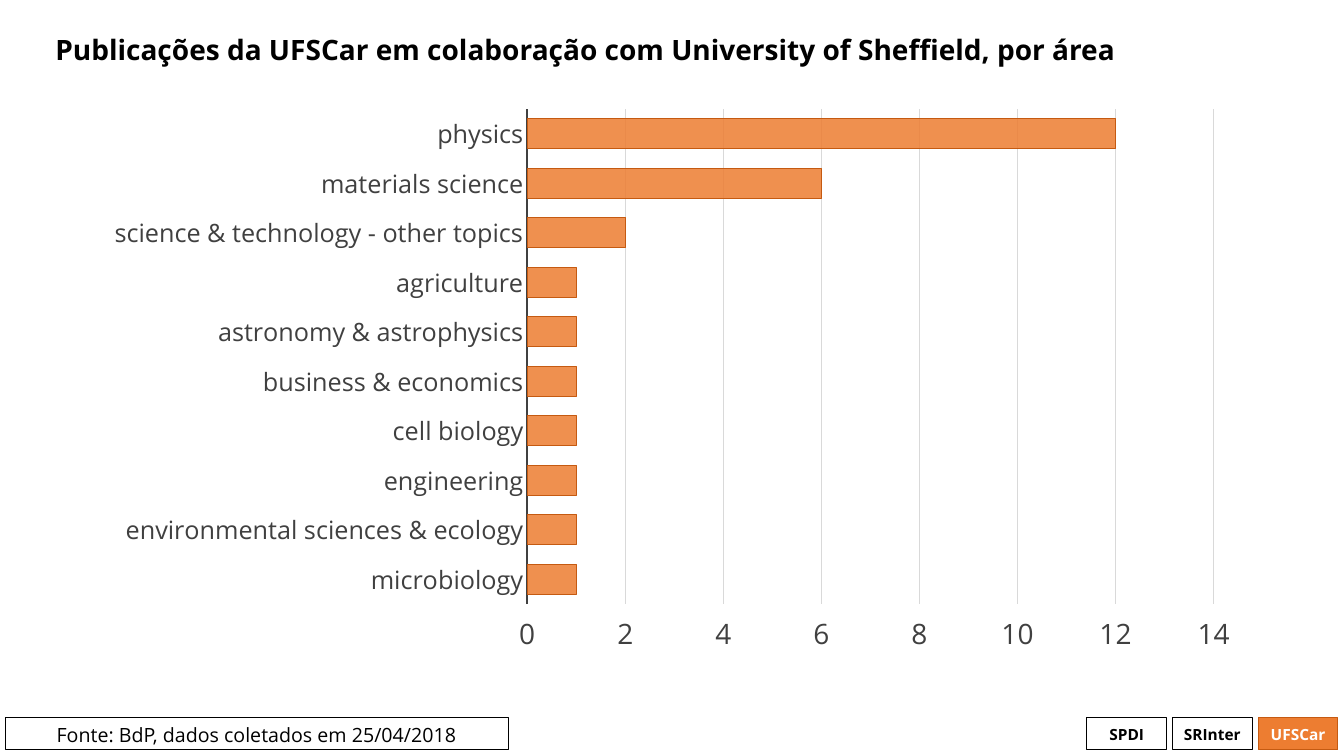
from dataclasses import dataclass
from typing import Any, Optional

from lxml.etree import SubElement
from pptx import Presentation
from pptx.chart.data import CategoryChartData
from pptx.dml.color import RGBColor
from pptx.enum.chart import XL_CHART_TYPE, XL_TICK_LABEL_POSITION, XL_TICK_MARK
from pptx.enum.shapes import MSO_SHAPE
from pptx.enum.text import MSO_ANCHOR, PP_ALIGN
from pptx.oxml import parse_xml
from pptx.oxml.ns import nsdecls, qn
from pptx.util import Inches, Pt

BLACK = RGBColor(0x00, 0x00, 0x00)
WHITE = RGBColor(0xFF, 0xFF, 0xFF)
ORANGE = RGBColor(0xED, 0x7D, 0x31)
RUST = RGBColor(0xC5, 0x5A, 0x11)
SLATE = RGBColor(0x40, 0x40, 0x40)
SILVER = RGBColor(0xD9, 0xD9, 0xD9)
FACE = "Open Sans"
FOOT_TOP, FOOT_TALL = 7.12, 0.32
TAG_LEFT, TAG_WIDE, TAG_STEP = 10.78, 0.79, 0.85

AREAS = {
    "physics": 12,
    "materials science": 6,
    "science & technology - other topics": 2,
    "agriculture": 1,
    "astronomy & astrophysics": 1,
    "business & economics": 1,
    "cell biology": 1,
    "engineering": 1,
    "environmental sciences & ecology": 1,
    "microbiology": 1,
}
FRAME = {"x": 0.375, "y": 0.02, "w": 0.591, "h": 0.874}


@dataclass
class Box:
    text: str
    left: float
    width: float
    size: int = 11
    bold: bool = True
    ink: RGBColor = BLACK
    edge: RGBColor = BLACK
    fill: Optional[RGBColor] = None
    anchor: MSO_ANCHOR = MSO_ANCHOR.MIDDLE


def apply(item: Any, values: dict[str, Any]) -> None:
    for name, value in values.items():
        setattr(item, name, value)


def style(font: Any, size: int, ink: RGBColor, bold: bool = False) -> None:
    apply(font, {"name": FACE, "size": Pt(size), "bold": bold})
    font.color.rgb = ink


def stroke(line: Any, ink: RGBColor, width: float = 0.75) -> None:
    line.color.rgb = ink
    line.width = Pt(width)


def draw_box(slide: Any, box: Box) -> None:
    shape = slide.shapes.add_shape(
        MSO_SHAPE.RECTANGLE, Inches(box.left), Inches(FOOT_TOP),
        Inches(box.width), Inches(FOOT_TALL))
    shape.shadow.inherit = False
    if box.fill is None:
        shape.fill.background()
    else:
        shape.fill.solid()
        shape.fill.fore_color.rgb = box.fill
    stroke(shape.line, box.edge)
    apply(shape.text_frame, {
        "text": box.text, "word_wrap": True, "vertical_anchor": box.anchor})
    line = shape.text_frame.paragraphs[0]
    line.alignment = PP_ALIGN.CENTER
    style(line.runs[0].font, box.size, box.ink, box.bold)


def draw_title(slide: Any, text: str) -> None:
    frame = slide.shapes.add_textbox(
        Inches(0.45), Inches(0.06), Inches(12.41), Inches(0.91)).text_frame
    apply(frame, {
        "text": text, "word_wrap": True, "vertical_anchor": MSO_ANCHOR.MIDDLE})
    line = frame.paragraphs[0]
    line.line_spacing = 0.9
    style(line.runs[0].font, 20, BLACK, True)


def place_plot(chart: Any) -> None:
    area = chart.element.find(".//" + qn("c:plotArea"))
    for old in area.findall(qn("c:layout")):
        area.remove(old)
    layout = parse_xml(f"<c:layout {nsdecls('c')}><c:manualLayout/></c:layout>")
    marks = {"layoutTarget": "inner", "xMode": "edge", "yMode": "edge", **FRAME}
    for name, value in marks.items():
        SubElement(layout[0], qn("c:" + name)).set("val", str(value))
    area.insert(0, layout)


def draw_chart(slide: Any) -> None:
    data = CategoryChartData()
    data.categories = list(AREAS)
    data.add_series("Series 1", list(AREAS.values()))
    chart = slide.shapes.add_chart(
        XL_CHART_TYPE.BAR_CLUSTERED, Inches(0.91), Inches(0.97),
        Inches(11.52), Inches(5.62), data).chart
    apply(chart, {"has_legend": False, "has_title": False})
    style(chart.font, 10, BLACK)
    plot = chart.plots[0]
    apply(plot, {"gap_width": 65, "vary_by_categories": False})

    bars = plot.series[0]
    bars.format.fill.solid()
    bars.format.fill.fore_color.rgb = ORANGE
    stroke(bars.format.line, RUST)
    tint = chart.element.find(
        f".//{qn('c:ser')}/{qn('c:spPr')}/{qn('a:solidFill')}/{qn('a:srgbClr')}")
    SubElement(tint, qn("a:alpha")).set("val", "85000")

    ticks = {"major_tick_mark": XL_TICK_MARK.NONE,
             "minor_tick_mark": XL_TICK_MARK.NONE}
    names, scale = chart.category_axis, chart.value_axis
    apply(names, {**ticks, "reverse_order": True, "has_major_gridlines": False})
    apply(scale, {**ticks, "minimum_scale": 0, "maximum_scale": 14,
                  "major_unit": 2, "has_major_gridlines": True,
                  "tick_label_position": XL_TICK_LABEL_POSITION.HIGH})
    style(names.tick_labels.font, 18, SLATE)
    style(scale.tick_labels.font, 20, SLATE)
    stroke(names.format.line, SLATE, 1.5)
    scale.format.line.fill.background()
    stroke(scale.major_gridlines.format.line, SILVER)
    place_plot(chart)


def main() -> None:
    deck = Presentation()
    apply(deck, {"slide_width": Inches(13.33), "slide_height": Inches(7.5)})
    slide = deck.slides.add_slide(deck.slide_layouts[6])
    looks = {
        "SPDI": {},
        "SRInter": {},
        "UFSCar": {"ink": WHITE, "edge": RUST, "fill": ORANGE},
    }
    for index, (text, look) in enumerate(looks.items()):
        draw_box(slide, Box(text, TAG_LEFT + index * TAG_STEP, TAG_WIDE, **look))
    draw_box(slide, Box("Fonte: BdP, dados coletados em 25/04/2018", 0.05, 4.99,
                        size=14, bold=False, anchor=MSO_ANCHOR.TOP))
    draw_chart(slide)
    draw_title(slide, "Publicações da UFSCar em colaboração com "
                      "University of Sheffield, por área")
    deck.save("out.pptx")


if __name__ == "__main__":
    main()
